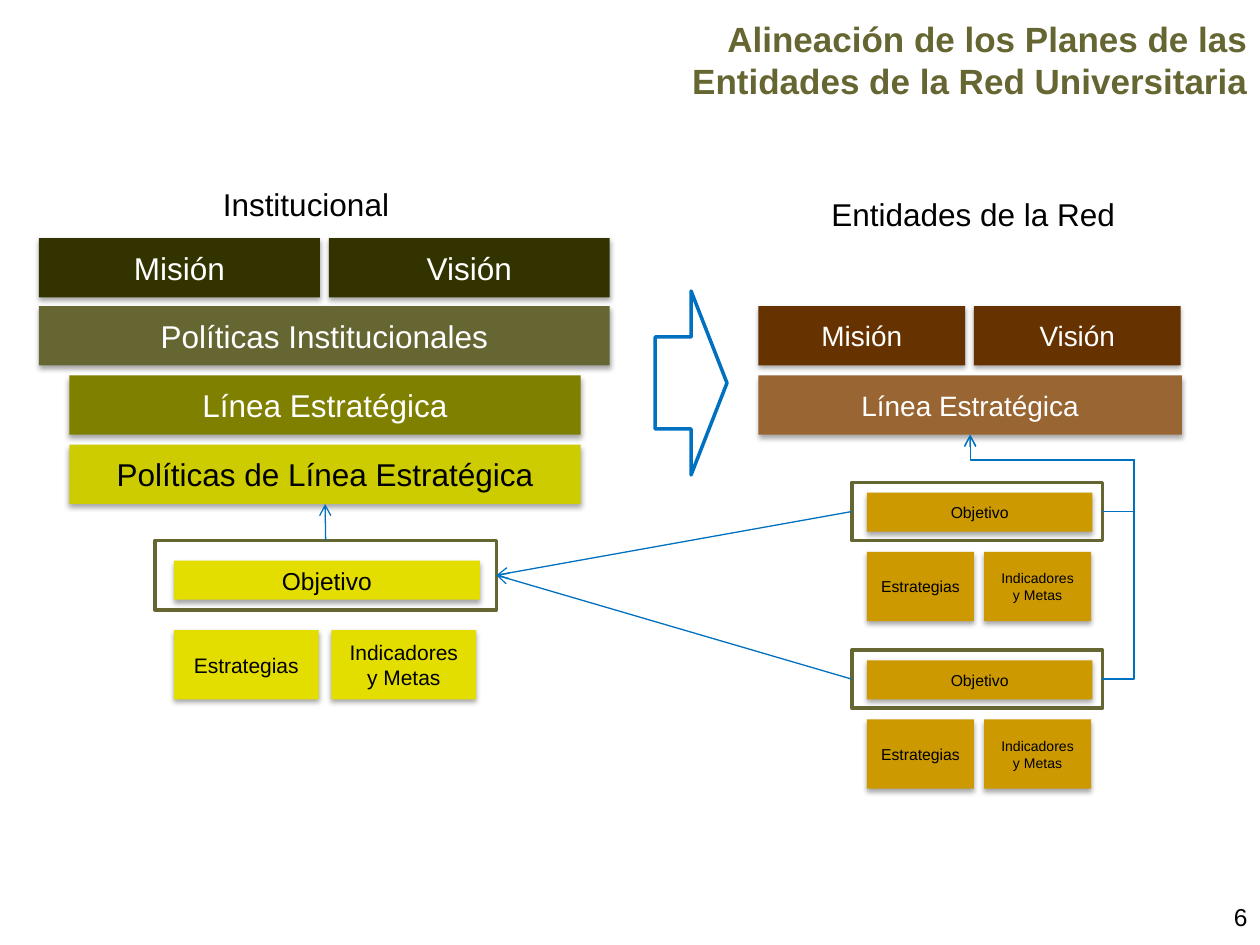
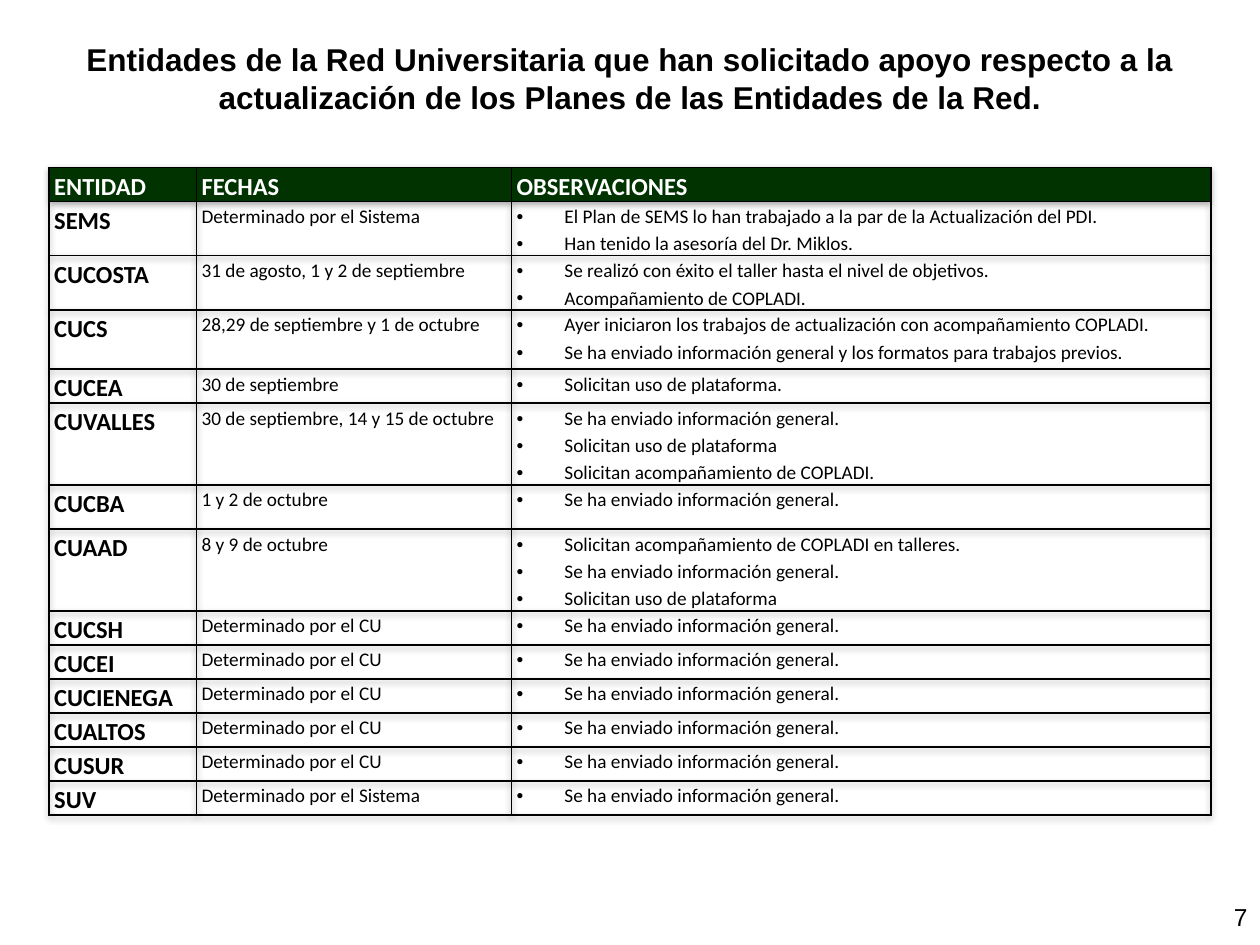
"""Builds two slides on aligning the plans of the university network."""
import lxml.etree
import pptx
import pptx.dml.color
import pptx.enum.shapes
import pptx.enum.text
import pptx.oxml
import pptx.oxml.ns
import pptx.util

Inches, Pt = pptx.util.Inches, pptx.util.Pt
ALIGN, ANCHOR = pptx.enum.text.PP_ALIGN, pptx.enum.text.MSO_ANCHOR
SHAPE, LINK = pptx.enum.shapes.MSO_SHAPE, pptx.enum.shapes.MSO_CONNECTOR
qn = pptx.oxml.ns.qn
NS = pptx.oxml.ns.nsdecls("a")

THEME = {
    "font": "Arial", "table_font": "Calibri",
    "black": "000000", "white": "FFFFFF", "olive": "666633", "blue": "0070C0",
    "dark_olive": "333300", "mid_olive": "808000", "lime": "CCCC00",
    "yellow": "E3DE00", "brown": "663300", "tan": "996633", "gold": "CC9900",
    "header": "003300",
    "title": 20, "table_title": 18, "label": 18, "entity": 16, "number": 14,
    "goal": 14, "detail": 12, "small": 9, "tiny": 8, "cell_head": 14, "cell": 11,
}

BAR_H = 0.47
BARS = {
    "mission": ("Misión", 0.31, 1.89, 2.23, "dark_olive", "white", "label"),
    "vision": ("Visión", 2.61, 1.89, 2.23, "dark_olive", "white", "label"),
    "policies": ("Políticas Institucionales", 0.31, 2.43, 4.53, "olive", "white", "label"),
    "line": ("Línea Estratégica", 0.55, 2.98, 4.06, "mid_olive", "white", "label"),
    "line_policies": ("Políticas de Línea Estratégica", 0.55, 3.53, 4.06, "lime", "black", "label"),
    "net_mission": ("Misión", 6.02, 2.43, 1.64, "brown", "white", "entity"),
    "net_vision": ("Visión", 7.73, 2.43, 1.64, "brown", "white", "entity"),
    "net_line": ("Línea Estratégica", 6.02, 2.98, 3.36, "tan", "white", "entity"),
}
CAPTIONS = [("Institucional", 1.67, 1.42, 1.53), ("Entidades de la Red", 6.5, 1.5, 2.47)]
DETAILS = ["Estrategias", "Indicadores y Metas"]
INSTITUTION_GOAL = {"frame": (2.71, 0.55), "inset": (0.15, 0.16), "goal_w": 2.43,
                    "drop": 0.71, "detail_w": 1.15, "step": 1.25, "fill": "yellow",
                    "sizes": ("goal", "detail", "detail")}
NETWORK_GOAL = {"frame": (1.99, 0.46), "inset": (0.12, 0.08), "goal_w": 1.79,
                "drop": 0.55, "detail_w": 0.85, "step": 0.93, "fill": "gold",
                "sizes": ("small", "small", "tiny")}
NETWORK_GOAL_TOPS = [3.83, 5.16]

SENT = "Se ha enviado información general."
BY_CENTRE, BY_SYSTEM = "Determinado por el CU", "Determinado por el Sistema"
HEADINGS = ["ENTIDAD", "FECHAS", "OBSERVACIONES"]
ENTITIES = [
    ("SEMS", BY_SYSTEM, ["El Plan de SEMS lo han trabajado a la par de la Actualización del PDI.",
                         "Han tenido la asesoría del Dr. Miklos."]),
    ("CUCOSTA", "31 de agosto, 1 y 2 de septiembre",
     ["Se realizó con éxito el taller hasta el nivel de objetivos.", "Acompañamiento de COPLADI."]),
    ("CUCS", "28,29 de septiembre y 1 de octubre",
     ["Ayer iniciaron los trabajos de actualización con acompañamiento COPLADI.",
      "Se ha enviado información general y los formatos para trabajos previos."]),
    ("CUCEA", "30 de septiembre", ["Solicitan uso de plataforma."]),
    ("CUVALLES", "30 de septiembre, 14 y 15 de octubre",
     [SENT, "Solicitan uso de plataforma", "Solicitan acompañamiento de COPLADI."]),
    ("CUCBA", "1 y 2 de octubre", [SENT]),
    ("CUAAD", "8 y 9 de octubre",
     ["Solicitan acompañamiento de COPLADI en talleres.", SENT, "Solicitan uso de plataforma"]),
    *[(name, BY_CENTRE, [SENT]) for name in ("CUCSH", "CUCEI", "CUCIENEGA", "CUALTOS", "CUSUR")],
    ("SUV", BY_SYSTEM, [SENT]),
]
COLUMNS = [1.17, 2.5, 5.55]
ROW_H = {1: 0.27, 2: 0.43, 3: 0.65}
TALL_ROWS = {"CUCS": 0.47, "CUCBA": 0.35}


def color(name):
    return pptx.dml.color.RGBColor.from_string(THEME[name])


def box_at(*lengths):
    return [Inches(v) for v in lengths]


def add_run(p, text, size, ink="black", bold=False, font="font"):
    r = p.add_run()
    r.text = text
    r.font.name, r.font.size, r.font.bold = THEME[font], Pt(THEME[size]), bold
    r.font.color.rgb = color(ink)


def add_text(s, text, at, size, align=ALIGN.LEFT, ink="black", bold=False,
             anchor=ANCHOR.TOP, wrap=True):
    tf = s.shapes.add_textbox(*box_at(*at)).text_frame
    tf.word_wrap, tf.vertical_anchor = wrap, anchor
    p = tf.paragraphs[0]
    p.alignment = align
    add_run(p, text, size, ink, bold)


def add_title(s, text, at, size, align, ink):
    add_text(s, text, at, size, align, ink, True, ANCHOR.MIDDLE)


def add_number(s, number):
    add_text(s, str(number), (7.67, 7.11, 2.33, 0.52), "number", ALIGN.RIGHT)


def add_shadow(effects):
    effects.append(pptx.oxml.parse_xml(
        f'<a:outerShdw {NS} blurRad="{Pt(3.1)}" dist="{Pt(1.8)}" dir="5400000" rotWithShape="0">'
        '<a:srgbClr val="000000"><a:alpha val="35000"/></a:srgbClr></a:outerShdw>'))


def add_block(s, text, x, y, w, h, fill, ink, size):
    sp = s.shapes.add_shape(SHAPE.RECTANGLE, *box_at(x, y, w, h))
    sp.fill.solid()
    sp.fill.fore_color.rgb = color(fill)
    sp.line.fill.background()
    sp.shadow.inherit = False
    add_shadow(sp.element.spPr.find(qn("a:effectLst")))
    tf = sp.text_frame
    tf.word_wrap, tf.vertical_anchor = True, ANCHOR.MIDDLE
    p = tf.paragraphs[0]
    p.alignment = ALIGN.CENTER
    add_run(p, text, size, ink)
    return sp


def add_outline(s, kind, at, line, fill=None):
    sp = s.shapes.add_shape(kind, *box_at(*at))
    sp.shadow.inherit = False
    if fill:
        sp.fill.solid()
        sp.fill.fore_color.rgb = color(fill)
    else:
        sp.fill.background()
    sp.line.color.rgb, sp.line.width = color(line), Pt(2)
    return sp


def add_goal(s, x, y, kind):
    frame = add_outline(s, SHAPE.RECTANGLE, (x, y, *kind["frame"]), "olive")
    left, top = x + kind["inset"][0], y + kind["inset"][1]
    goal_size, *detail_sizes = kind["sizes"]
    add_block(s, "Objetivo", left, top, kind["goal_w"], 0.31, kind["fill"], "black", goal_size)
    for i, (text, size) in enumerate(zip(DETAILS, detail_sizes)):
        add_block(s, text, left + i * kind["step"], y + kind["drop"], kind["detail_w"], 0.55,
                  kind["fill"], "black", size)
    return frame


def add_link(s, kind, start=(0, 0), end=(0, 0)):
    c = s.shapes.add_connector(kind, *box_at(*start, *end))
    c.line.color.rgb, c.line.width = color("blue"), Pt(0.75)
    lxml.etree.SubElement(c.line._get_or_add_ln(), qn("a:tailEnd"), type="arrow")
    lxml.etree.SubElement(c.element.spPr, qn("a:effectLst"))
    return c


def join(s, start, start_side, end, end_side):
    c = add_link(s, LINK.STRAIGHT)
    c.begin_connect(start, start_side)
    c.end_connect(end, end_side)


def add_elbow(s, start, end, via_x, via_y):
    c = add_link(s, LINK.ELBOW, start, end)
    geom = c.element.spPr.find(qn("a:prstGeom"))
    geom.set("prst", "bentConnector4")
    guides = geom.find(qn("a:avLst"))
    ratios = ((via_x - start[0]) / (end[0] - start[0]), (via_y - start[1]) / (end[1] - start[1]))
    for i, ratio in enumerate(ratios, 1):
        lxml.etree.SubElement(guides, qn("a:gd"), name=f"adj{i}", fmla=f"val {round(ratio * 100000)}")


def build_alignment(s):
    add_title(s, "Alineación de los Planes de las Entidades de la Red Universitaria",
              (5.25, 0.23, 4.75, 0.48), "title", ALIGN.RIGHT, "olive")
    bars = {key: add_block(s, text, x, y, w, BAR_H, *style)
            for key, (text, x, y, w, *style) in BARS.items()}
    goal = add_goal(s, 1.23, 4.29, INSTITUTION_GOAL)
    join(s, goal, 0, bars["line_policies"], 2)
    for y in NETWORK_GOAL_TOPS:
        frame = add_goal(s, 6.76, y, NETWORK_GOAL)
        join(s, frame, 1, goal, 3)
        add_elbow(s, (8.75, y + 0.23), (7.7, 3.45), 9, 3.65)
    add_outline(s, SHAPE.RIGHT_ARROW, (5.2, 2.31, 0.57, 1.46), "blue", "white")
    for text, x, y, w in CAPTIONS:
        add_text(s, text, (x, y, w, 0.4), "label", wrap=False)
    add_number(s, 6)


def fill_cell(cell, lines, size, ink="black", bold=False, fill=None, bullets=False):
    cell.margin_left = cell.margin_right = Inches(0.04)
    cell.margin_top = cell.margin_bottom = 0
    tc_pr = cell._tc.get_or_add_tcPr()
    for side in "LRTB":
        tc_pr.append(pptx.oxml.parse_xml(
            f'<a:ln{side} {NS} w="{Pt(1)}"><a:solidFill><a:srgbClr val="{THEME["black"]}"/>'
            f'</a:solidFill></a:ln{side}>'))
    if fill:
        cell.fill.solid()
        cell.fill.fore_color.rgb = color(fill)
    else:
        cell.fill.background()
    tf = cell.text_frame
    for i, line in enumerate(lines):
        p = tf.add_paragraph() if i else tf.paragraphs[0]
        p.line_spacing = 1.15
        if bullets:
            p_pr = p._p.get_or_add_pPr()
            p_pr.set("marL", str(Inches(0.38)))
            p_pr.set("indent", str(-Inches(0.38)))
            lxml.etree.SubElement(p_pr, qn("a:buFont"), typeface=THEME["font"])
            lxml.etree.SubElement(p_pr, qn("a:buChar"), char="•")
        add_run(p, line, size, ink, bold, "table_font")


def build_requests(s):
    add_title(s, "Entidades de la Red Universitaria que han solicitado apoyo respecto a la "
              "actualización de los Planes de las Entidades de la Red.",
              (0, 0.23, 10, 0.78), "table_title", ALIGN.CENTER, "black")
    heights = [ROW_H[1]] + [TALL_ROWS.get(name, ROW_H[len(notes)]) for name, _, notes in ENTITIES]
    table = s.shapes.add_table(len(heights), len(COLUMNS),
                               *box_at(0.39, 1.33, sum(COLUMNS), sum(heights))).table
    table.first_row = table.horz_banding = False
    effects = pptx.oxml.parse_xml(f"<a:effectLst {NS}/>")
    add_shadow(effects)
    table._tbl.tblPr.insert(0, effects)
    for column, w in zip(table.columns, COLUMNS):
        column.width = Inches(w)
    for row, h in zip(table.rows, heights):
        row.height = Inches(h)
    for i, heading in enumerate(HEADINGS):
        fill_cell(table.cell(0, i), [heading], "cell_head", "white", True, "header")
    for i, (name, dates, notes) in enumerate(ENTITIES, 1):
        fill_cell(table.cell(i, 0), [name], "cell_head", bold=True)
        fill_cell(table.cell(i, 1), [dates], "cell")
        fill_cell(table.cell(i, 2), notes, "cell", bullets=True)
    add_number(s, 7)


def main():
    prs = pptx.Presentation()
    prs.slide_width, prs.slide_height = box_at(10, 7.5)
    for build in (build_alignment, build_requests):
        build(prs.slides.add_slide(prs.slide_layouts[6]))
    prs.save("out.pptx")


if __name__ == "__main__":
    main()
